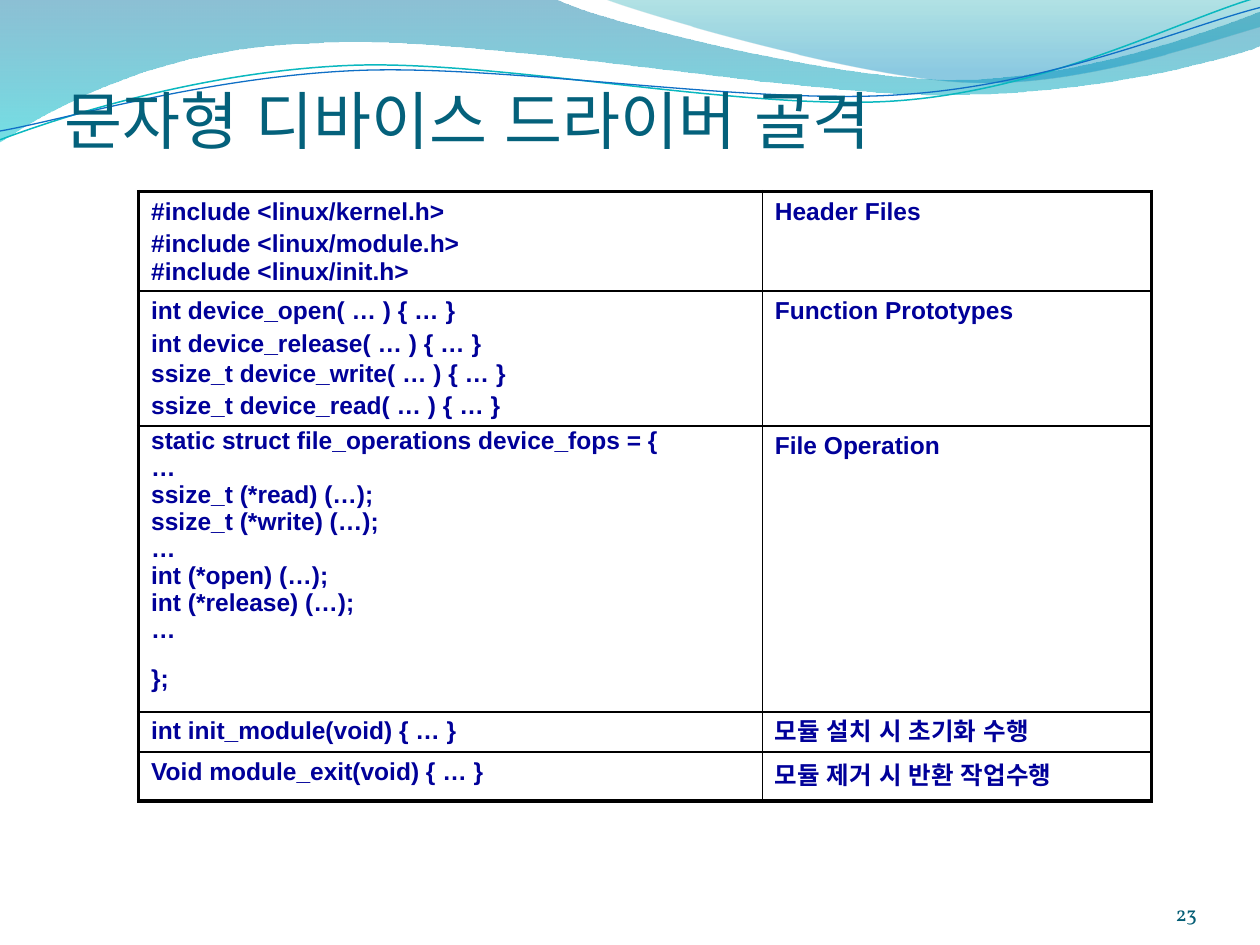
from lxml import etree
from pptx import Presentation
from pptx import util as u
from pptx.dml.color import RGBColor
from pptx.enum import text
from pptx.oxml.ns import qn

TITLE = RGBColor(0x04, 0x61, 0x7B)
NUMBER = RGBColor(0x04, 0x5D, 0x75)
CODE = RGBColor(0x00, 0x00, 0x99)
BORDER = RGBColor(0, 0, 0)
BLUE = RGBColor(0x00, 0x74, 0xA1)
CYAN = RGBColor(0x00, 0xC6, 0xCF)
TEAL = RGBColor(0x00, 0xA1, 0xA9)
SKY = RGBColor(0x00, 0x8B, 0xBF)
LINE_TEAL = RGBColor(0x0A, 0xB8, 0xBF)
LINE_BLUE = RGBColor(0x0F, 0x6F, 0xC6)

COLS, ROWS = 10, 7.5
CODE_SIZE, TAIL_SIZE = 14, 28

FILLED_WAVES = [
    ([(0, 0), (4.4, -0.01),
      (4.76, 0.17, 6.64, 0.63, 7.58, 0.63), (8.53, 0.63, 9.58, 0.26, 10, 0.09),
      (10.01, 0.36),
      (9.83, 0.44, 8.7, 0.76, 7.46, 0.75), (6.22, 0.75, 3.82, 0.28, 2.57, 0.34),
      (1.29, 0.36, 0.46, 0.83, -0.01, 1.13)],
     [(0, BLUE, 45), (1, CYAN, 55)]),
    ([(4.79, -0.01),
      (5.09, 0.11, 6.82, 0.62, 7.69, 0.65), (8.56, 0.69, 9.61, 0.32, 10, 0.21),
      (10, 0)],
     [(0, TEAL, 30), (0.8, SKY, 45)]),
]
LINE_WAVES = [
    ([(0, 1.11),
      (0.48, 0.93, 1.58, 0.57, 2.77, 0.52), (3.95, 0.47, 5.93, 0.89, 7.13, 0.8),
      (8.33, 0.71, 9.38, 0.15, 9.98, -0.02)], LINE_TEAL, 0.85),
    ([(0, 1.04),
      (0.47, 0.96, 1.64, 0.61, 2.83, 0.56), (4.03, 0.51, 5.97, 0.84, 7.17, 0.75),
      (8.36, 0.67, 9.41, 0.21, 10, 0.06)], LINE_BLUE, 0.75),
]

COLUMN_WIDTHS = [4.95, 3.09]
TABLE_ROWS = [
    (0.38, [("#include <linux/kernel.h>", 1), ("#include <linux/module.h>", 1),
            ("#include <linux/init.h>", 0.8)],
     [("Header Files", 1)]),
    (0.89, [("int device_open( … ) { … }", 1), ("int device_release( … ) { … }", 1),
            ("ssize_t device_write( … ) { … }", 0.9),
            ("ssize_t device_read( … ) { … }", 1)],
     [("Function Prototypes", 1)]),
    (2.27, [(line, 0.8) for line in (
        "static struct file_operations device_fops = {", "…",
        "ssize_t (*read) (…);", "ssize_t (*write) (…);", "…",
        "int (*open) (…);", "int (*release) (…);", "…")] + [("};", 0.8, True)],
     [("File Operation", 1)]),
    (0.31, [("int init_module(void) { … }", 0.5, True)],
     [("모듈 설치 시 초기화 수행", 1)]),
    (0.39, [("Void module_exit(void) { … }", 0.5, True)],
     [("모듈 제거 시 반환 작업수행", 0.6, True)]),
]


def style(r, size, font, color, bold=None):
    r.font.size, r.font.name, r.font.bold = u.Pt(size), font, bold
    r.font.color.rgb = color
    etree.SubElement(r._r.get_or_add_rPr(), qn("a:ea"), typeface="Arial")


def curve(sp, parts):
    lines = iter(list(sp.element.iter(qn("a:lnTo"))))
    for part in parts:
        group = [next(lines) for _ in range(len(part) // 2)]
        if len(group) == 3:
            bezier = etree.Element(qn("a:cubicBezTo"))
            group[0].addprevious(bezier)
            for line in group:
                bezier.append(line[0])
                line.getparent().remove(line)


def add_wave(s, box, path, close):
    x, y, w, h = box
    points = [(x + w * part[i] / COLS, y + h * part[i + 1] / ROWS)
              for part in path for i in range(0, len(part), 2)]
    fb = s.shapes.build_freeform(*points[0])
    fb.add_line_segments(points[1:], close=close)
    sp = fb.convert_to_shape()
    curve(sp, path[1:])
    sp.shadow.inherit = False
    return sp


def add_waves(s, box):
    for path, stops in FILLED_WAVES:
        sp = add_wave(s, box, path, True)
        sp.line.fill.background()
        sp.fill.gradient()
        sp.fill.gradient_angle = 270
        for stop, (position, color, _) in zip(sp.fill.gradient_stops, stops):
            stop.position, stop.color.rgb = position, color
        for clr, (_, _, opacity) in zip(sp.element.iter(qn("a:srgbClr")), stops):
            etree.SubElement(clr, qn("a:alpha"), val=str(opacity * 1000))
    for path, color, width in LINE_WAVES:
        sp = add_wave(s, box, path, False)
        sp.fill.background()
        sp.line.color.rgb, sp.line.width = color, u.Pt(width)


def add_title(s, box, title):
    sp = s.shapes.title
    s.shapes.element.append(sp.element)
    sp.left, sp.top, sp.width, sp.height = box
    tf = sp.text_frame
    tf.text = title
    tf.auto_size = text.MSO_AUTO_SIZE.NONE
    tf.vertical_anchor = text.MSO_ANCHOR.BOTTOM
    tf.margin_left = tf.margin_right = tf.margin_bottom = 0
    p = tf.paragraphs[0]
    p.alignment = text.PP_ALIGN.LEFT
    style(p.runs[0], 36, "Calibri", TITLE)


def set_borders(cell, widths):
    pr = cell._tc.get_or_add_tcPr()
    for i, (side, width) in enumerate(widths.items()):
        ln = etree.Element(qn("a:ln" + side), w=str(u.Pt(width)))
        fill = etree.SubElement(ln, qn("a:solidFill"))
        etree.SubElement(fill, qn("a:srgbClr"), val=str(BORDER))
        pr.insert(i, ln)


def fill_cell(cell, lines):
    tf = cell.text_frame
    tf.text = "\n".join(line[0] for line in lines)
    for p, (_, spacing, *tail) in zip(tf.paragraphs, lines):
        p.line_spacing = spacing
        p.space_before = u.Pt(0.2 * (TAIL_SIZE if tail else CODE_SIZE))
        style(p.runs[0], CODE_SIZE, "Arial", CODE, True)
        if tail:
            r = p.add_run()
            r.text = " "
            style(r, TAIL_SIZE, "Arial", CODE, True)


def add_code_table(s, box):
    n, m = len(TABLE_ROWS), len(COLUMN_WIDTHS)
    frame = s.shapes.add_table(n, m, *box)
    table = frame.table
    table.first_row = table.horz_banding = False
    for column, share in zip(table.columns, COLUMN_WIDTHS):
        column.width = int(box[2] * share / sum(COLUMN_WIDTHS))
    for i, (height, *cells) in enumerate(TABLE_ROWS):
        table.rows[i].height = u.Inches(height)
        for j, lines in enumerate(cells):
            cell = table.cell(i, j)
            fill_cell(cell, lines)
            cell.fill.background()
            edges = {"L": j == 0, "R": j == m - 1, "T": i == 0, "B": i == n - 1}
            set_borders(cell, {k: 2.25 if outer else 1 for k, outer in edges.items()})
    frame.height = box[3]


def add_page_number(s, box, number):
    tf = s.shapes.add_textbox(*box).text_frame
    tf.word_wrap = True
    tf.margin_left = tf.margin_right = tf.margin_top = tf.margin_bottom = 0
    tf.vertical_anchor = text.MSO_ANCHOR.BOTTOM
    tf.text = number
    p = tf.paragraphs[0]
    p.alignment = text.PP_ALIGN.RIGHT
    style(p.runs[0], 12, "Vollkorn", NUMBER)


def main():
    prs = Presentation()
    prs.slide_width, prs.slide_height = u.Inches(COLS), u.Inches(ROWS)

    def grid(x, y, w, h):
        cw, rh = prs.slide_width / COLS, prs.slide_height / ROWS
        return int(x * cw), int(y * rh), int(w * cw), int(h * rh)

    s = prs.slides.add_slide(prs.slide_layouts[5])
    add_waves(s, grid(0, 0, COLS, ROWS))
    add_title(s, grid(0.51, 0, 9, 1.25), "문자형 디바이스 드라이버 골격")
    add_code_table(s, grid(1.1, 1.52, 8.04, 5.11))
    add_page_number(s, grid(8.67, 6.95, 0.83, 0.4), "23")
    prs.save("out.pptx")


if __name__ == "__main__":
    main()
